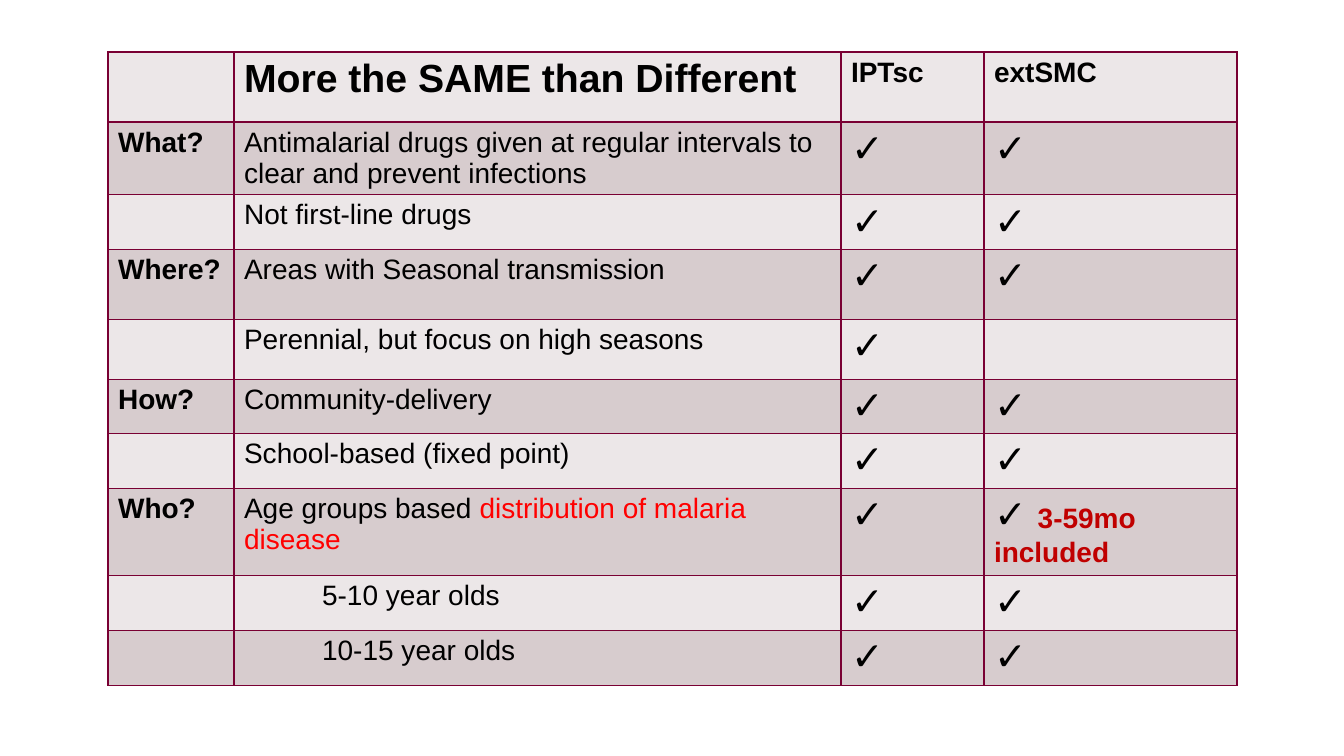
from lxml import etree
from pptx import Presentation
from pptx.dml.color import RGBColor
from pptx.oxml.ns import qn
from pptx.util import Emu, Pt

SLIDE_WIDTH, SLIDE_HEIGHT = 1344, 756
EMU_PER_PX = 12192000 / SLIDE_WIDTH

FONT = "Arial"
BLACK, RED, DARK_RED = "000000", "FF0000", "C00000"
BORDER = "790033"
BANDS = ("ECE7E8", "D7CCCE")

TABLE_LEFT, TABLE_TOP = 108, 52
COLUMN_WIDTHS = (126, 607, 143, 253)
ROW_HEIGHTS = (70, 72, 55, 70, 60, 54, 55, 87, 55, 55)
AGE_INDENT = 78

# Question, statement, applies to IPTsc, applies to extSMC
COMPARISON = (
    ("What?", "Antimalarial drugs given at regular intervals to "
     "clear and prevent infections", True, True),
    ("", "Not first-line drugs", True, True),
    ("Where?", "Areas with Seasonal transmission", True, True),
    ("", "Perennial, but focus on high seasons", True, False),
    ("How?", "Community-delivery", True, True),
    ("", "School-based (fixed point)", True, True),
    ("Who?", "Age groups based ", True, True),
    ("", "5-10 year olds", True, True),
    ("", "10-15 year olds", True, True),
)
AGE_GROUP_ROW = 7


def px(length):
    return Emu(round(length * EMU_PER_PX))


def rgb(color):
    return RGBColor.from_string(color)


def add_text(cell, text, size=20, color=BLACK, bold=False, indent=0):
    paragraph = cell.text_frame.paragraphs[0]
    if indent:
        paragraph._p.get_or_add_pPr().set("marL", str(px(indent)))
    run = paragraph.add_run()
    run.text = text
    run.font.name = FONT
    run.font.size = Pt(size)
    run.font.bold = bold
    run.font.color.rgb = rgb(color)


def style_cell(cell, fill):
    properties = cell._tc.get_or_add_tcPr()
    for side in ("a:lnL", "a:lnR", "a:lnT", "a:lnB"):
        line = etree.SubElement(properties, qn(side), w=str(Pt(1)))
        solid = etree.SubElement(line, qn("a:solidFill"))
        etree.SubElement(solid, qn("a:srgbClr"), val=BORDER)
    cell.fill.solid()
    cell.fill.fore_color.rgb = rgb(fill)


def add_grid(slide):
    frame = slide.shapes.add_table(
        len(ROW_HEIGHTS), len(COLUMN_WIDTHS), px(TABLE_LEFT), px(TABLE_TOP),
        px(sum(COLUMN_WIDTHS)), px(sum(ROW_HEIGHTS)))
    grid = frame.table
    grid.horz_banding = False
    for column, width in zip(grid.columns, COLUMN_WIDTHS):
        column.width = px(width)
    for index, (row, height) in enumerate(zip(grid.rows, ROW_HEIGHTS)):
        row.height = px(height)
        for cell in row.cells:
            style_cell(cell, BANDS[index % 2])
    return grid


def fill_header(grid):
    add_text(grid.cell(0, 1), "More the SAME than Different", size=28, bold=True)
    add_text(grid.cell(0, 2), "IPTsc", bold=True)
    add_text(grid.cell(0, 3), "extSMC", bold=True)


def fill_comparison(grid):
    for row, (question, statement, *programmes) in enumerate(COMPARISON, start=1):
        if question:
            add_text(grid.cell(row, 0), question, bold=True)
        indent = AGE_INDENT if row > AGE_GROUP_ROW else 0
        add_text(grid.cell(row, 1), statement, indent=indent)
        for column, applies in enumerate(programmes, start=2):
            if applies:
                add_text(grid.cell(row, column), "✓", size=28, bold=True)


def main():
    presentation = Presentation()
    presentation.slide_width = px(SLIDE_WIDTH)
    presentation.slide_height = px(SLIDE_HEIGHT)
    slide = presentation.slides.add_slide(presentation.slide_layouts[6])

    # Comparison table
    grid = add_grid(slide)
    fill_header(grid)
    fill_comparison(grid)

    # Red remarks in the age group row
    add_text(grid.cell(AGE_GROUP_ROW, 1), "distribution of malaria disease", color=RED)
    included = grid.cell(AGE_GROUP_ROW, 3)
    add_text(included, " ", size=28, bold=True)
    add_text(included, "3-59mo included", color=DARK_RED, bold=True)

    presentation.save("out.pptx")


if __name__ == "__main__":
    main()
